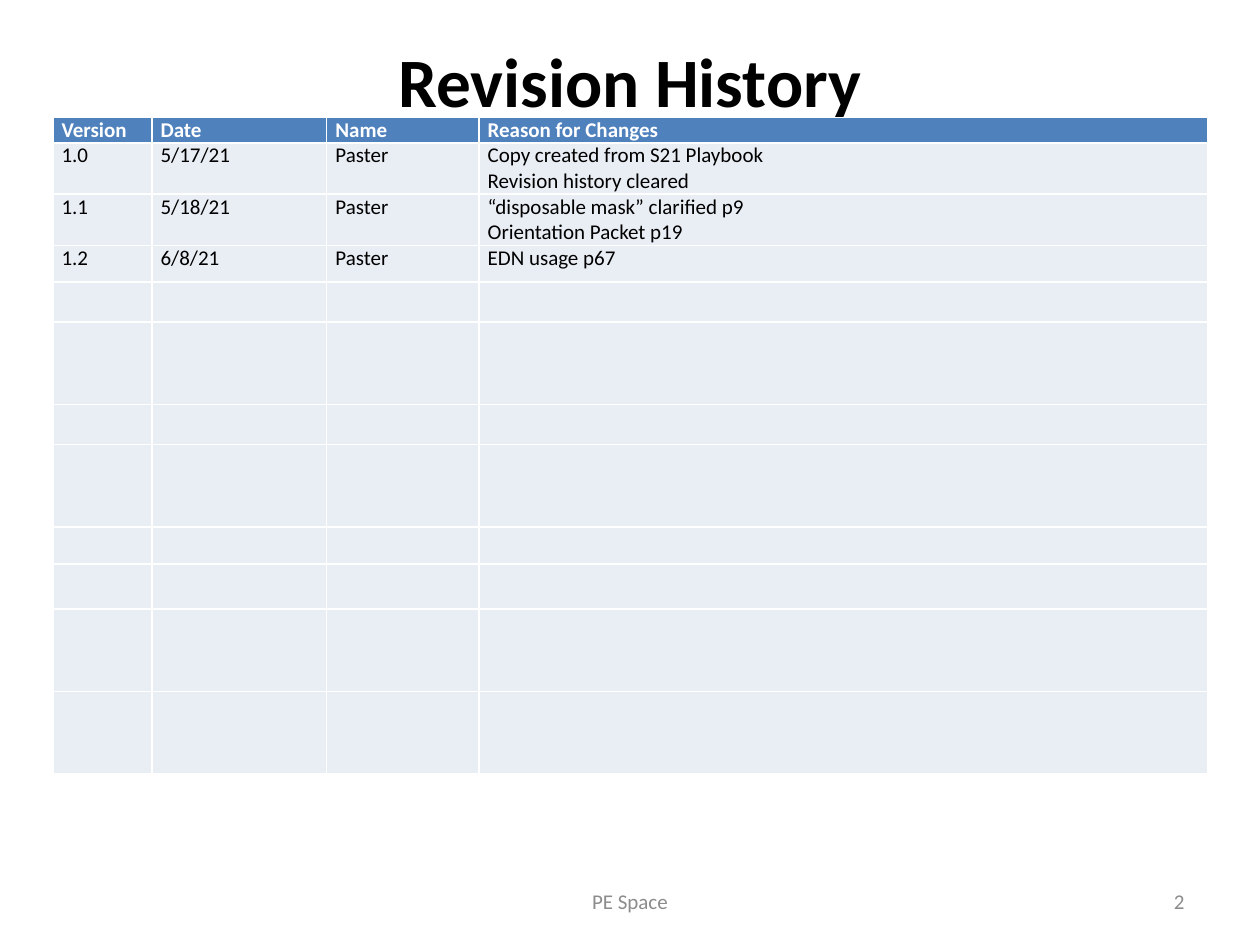
from lxml.etree import SubElement
from pptx import Presentation
from pptx.dml.color import RGBColor
from pptx.enum.text import MSO_ANCHOR, PP_ALIGN
from pptx.oxml.ns import qn
from pptx.util import Pt

COLUMN_WIDTHS = [56.6, 99.9, 87, 416.7]
ROW_HEIGHTS = [14.4, 29.3, 29.3, 20.9, 23, 47, 23, 47, 21.3, 25.7, 47, 47]
REVISIONS = [
    ("Version", "Date", "Name", "Reason for Changes"),
    ("1.0", "5/17/21", "Paster", "Copy created from S21 Playbook\nRevision history cleared"),
    ("1.1", "5/18/21", "Paster", "“disposable mask” clarified p9\nOrientation Packet p19"),
    ("1.2", "6/8/21", "Paster", "EDN usage p67"),
]


def format_text(frame, size, color, bold=False, align=PP_ALIGN.LEFT):
    for para in frame.paragraphs:
        para.alignment = align
        for span in para.runs:
            span.font.name = "Calibri"
            span.font.size = Pt(size)
            span.font.bold = bold
            span.font.color.rgb = RGBColor.from_string(color)


deck = Presentation()
deck.slide_width, deck.slide_height = Pt(720), Pt(540)
page = deck.slides.add_slide(deck.slide_layouts[5])

# Title
title = page.shapes.title
title.left, title.top, title.width, title.height = Pt(36), Pt(21.6), Pt(648), Pt(90)
title.text_frame.text = "Revision History"
title.text_frame.vertical_anchor = MSO_ANCHOR.TOP
title.text_frame.margin_top = 0
format_text(title.text_frame, 39.6, "000000", True, PP_ALIGN.CENTER)

# Revision table: the default style supplies the white rules
table = page.shapes.add_table(
    len(ROW_HEIGHTS), len(COLUMN_WIDTHS), Pt(30.2), Pt(67),
    Pt(sum(COLUMN_WIDTHS)), Pt(sum(ROW_HEIGHTS))).table
table.horz_banding = False
for column, width in zip(table.columns, COLUMN_WIDTHS):
    column.width = Pt(width)
for row_index, height in enumerate(ROW_HEIGHTS):
    table.rows[row_index].height = Pt(height)
    is_header = row_index == 0
    for column_index in range(len(COLUMN_WIDTHS)):
        cell = table.cell(row_index, column_index)
        cell.margin_left = cell.margin_right = Pt(5)
        cell.margin_top = cell.margin_bottom = 0
        cell.fill.solid()
        cell.fill.fore_color.rgb = RGBColor.from_string("4F81BD" if is_header else "E9EDF4")
        if row_index < len(REVISIONS):
            cell.text_frame.text = REVISIONS[row_index][column_index]
            format_text(cell.text_frame, 12, "FFFFFF" if is_header else "000000", is_header)
        else:
            # An empty cell takes its line height from the end-of-paragraph size
            SubElement(cell.text_frame.paragraphs[0]._p, qn("a:endParaRPr"), sz="1200")

# Footer and page number
for text, left, width, align in [
    ("PE Space", 246, 228, PP_ALIGN.CENTER),
    ("2", 516, 168, PP_ALIGN.RIGHT),
]:
    box = page.shapes.add_textbox(Pt(left), Pt(500.5), Pt(width), Pt(28.75))
    box.text_frame.word_wrap = True
    box.text_frame.vertical_anchor = MSO_ANCHOR.MIDDLE
    box.text_frame.text = text
    format_text(box.text_frame, 12, "8C8C8C", align=align)

deck.save("out.pptx")
